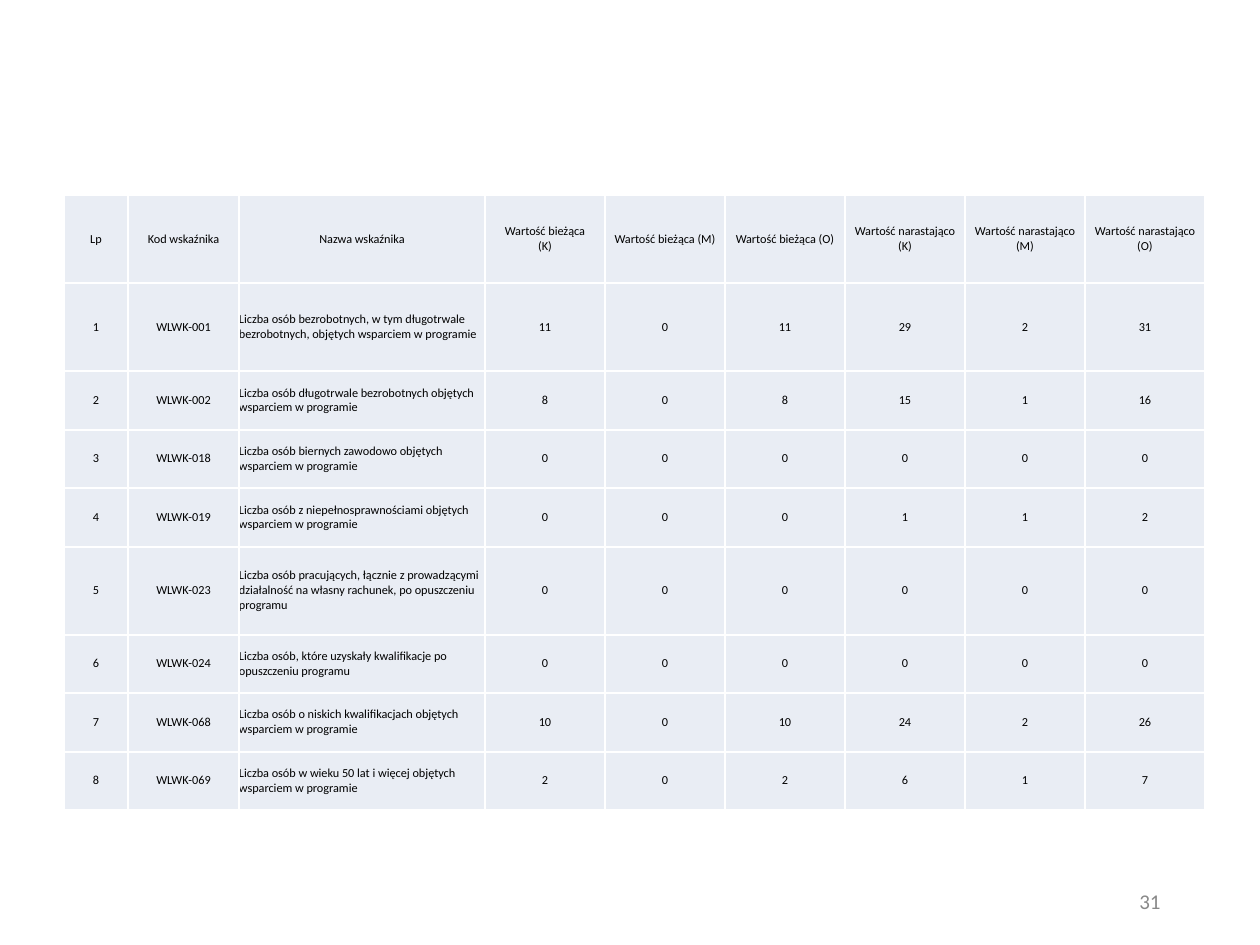
from copy import deepcopy
from dataclasses import dataclass
from typing import NamedTuple

from lxml.etree import SubElement as Sub
from pptx import Presentation
from pptx.dml.color import RGBColor as Rgb
from pptx.enum.text import MSO_ANCHOR as Anchor, PP_ALIGN as Align
from pptx.oxml.ns import qn
from pptx.util import Emu, Pt

SCALE = 914400 / 126  # EMU per px


@dataclass(frozen=True)
class Theme:
    font: str = "Calibri"
    ink: str = "000000"
    muted: str = "898989"
    cell: str = "E9EDF4"
    rule: str = "FFFFFF"
    body: int = 7
    number: int = 12
    border: int = 1


class Row(NamedTuple):
    height: int
    code: str
    name: str
    now: tuple[int, int]  # women, men
    total: tuple[int, int]

    def texts(self, index: int) -> list[str]:
        values = [*self.now, sum(self.now), *self.total, sum(self.total)]
        return [str(index), self.code, self.name, *map(str, values)]


THEME = Theme()
LEFT, TOP = 64, 195
WIDTHS = [64, 111, 246] + [120] * 6
HEAD = 88
NAME = 2  # the left-aligned column
TITLES = ["Lp", "Kod wskaźnika", "Nazwa wskaźnika",
          "Wartość bieżąca\n(K)", "Wartość bieżąca (M)", "Wartość bieżąca (O)",
          *(f"Wartość narastająco\n({sex})" for sex in "KMO")]
ROWS = [
    Row(88, "WLWK-001", "Liczba osób bezrobotnych, w tym długotrwale bezrobotnych, "
        "objętych wsparciem w programie", (11, 0), (29, 2)),
    Row(59, "WLWK-002", "Liczba osób długotrwale bezrobotnych objętych "
        "wsparciem w programie", (8, 0), (15, 1)),
    Row(58, "WLWK-018", "Liczba osób biernych zawodowo objętych "
        "wsparciem w programie", (0, 0), (0, 0)),
    Row(59, "WLWK-019", "Liczba osób z niepełnosprawnościami objętych "
        "wsparciem w programie", (0, 0), (1, 1)),
    Row(88, "WLWK-023", "Liczba osób pracujących, łącznie z prowadzącymi działalność "
        "na własny rachunek, po opuszczeniu programu", (0, 0), (0, 0)),
    Row(58, "WLWK-024", "Liczba osób, które uzyskały kwalifikacje po "
        "opuszczeniu programu", (0, 0), (0, 0)),
    Row(59, "WLWK-068", "Liczba osób o niskich kwalifikacjach objętych "
        "wsparciem w programie", (10, 0), (24, 2)),
    Row(58, "WLWK-069", "Liczba osób w wieku 50 lat i więcej objętych "
        "wsparciem w programie", (2, 0), (6, 1)),
]


def px(length: int) -> Emu:
    return Emu(round(length * SCALE))


def apply(target, values: dict) -> None:
    for key, value in values.items():
        setattr(target, key, value)


def write(frame, text: str, size: int, color: str, align: Align) -> None:
    para = frame.paragraphs[0]
    para.text = text
    para.alignment = align
    for run in para.runs:
        apply(run.font, {"name": THEME.font, "size": Pt(size), "bold": False})
        run.font.color.rgb = Rgb.from_string(color)
    # Line breaks take the size of the text around them
    for gap in para._p.findall(qn("a:br")):
        gap.append(deepcopy(para.runs[0]._r.rPr))


def edge(cell) -> None:
    props = cell._tc.get_or_add_tcPr()
    for side in "LRTB":
        line = Sub(props, qn(f"a:ln{side}"), w=str(Pt(THEME.border)))
        fill = Sub(line, qn("a:solidFill"))
        Sub(fill, qn("a:srgbClr"), val=THEME.rule)


def paint(cell, text: str, align: Align) -> None:
    edge(cell)
    apply(cell, {"margin_left": 0, "margin_right": 0, "margin_top": 0,
                 "margin_bottom": 0, "vertical_anchor": Anchor.MIDDLE})
    cell.fill.solid()
    cell.fill.fore_color.rgb = Rgb.from_string(THEME.cell)
    write(cell.text_frame, text, THEME.body, THEME.ink, align)


def grid(slide) -> None:
    heights = [HEAD] + [row.height for row in ROWS]
    lines = [TITLES] + [row.texts(i) for i, row in enumerate(ROWS, 1)]
    table = slide.shapes.add_table(
        len(lines), len(WIDTHS), px(LEFT), px(TOP),
        px(sum(WIDTHS)), px(sum(heights))).table
    apply(table, {"first_row": False, "horz_banding": False})
    for col, width in zip(table.columns, WIDTHS):
        col.width = px(width)
    for r, (height, texts) in enumerate(zip(heights, lines)):
        table.rows[r].height = px(height)
        for c, text in enumerate(texts):
            left = r > 0 and c == NAME
            paint(table.cell(r, c), text, Align.LEFT if left else Align.CENTER)


def folio(slide, text: str) -> None:
    box = slide.shapes.add_textbox(px(890), px(876), px(283), px(50))
    apply(box.text_frame, {"word_wrap": True, "vertical_anchor": Anchor.MIDDLE})
    write(box.text_frame, text, THEME.number, THEME.muted, Align.RIGHT)


def main() -> None:
    deck = Presentation()
    apply(deck, {"slide_width": px(1260), "slide_height": px(945)})
    slide = deck.slides.add_slide(deck.slide_layouts[6])
    # Page number, then the table of indicators
    folio(slide, "31")
    grid(slide)
    deck.save("out.pptx")


if __name__ == "__main__":
    main()
